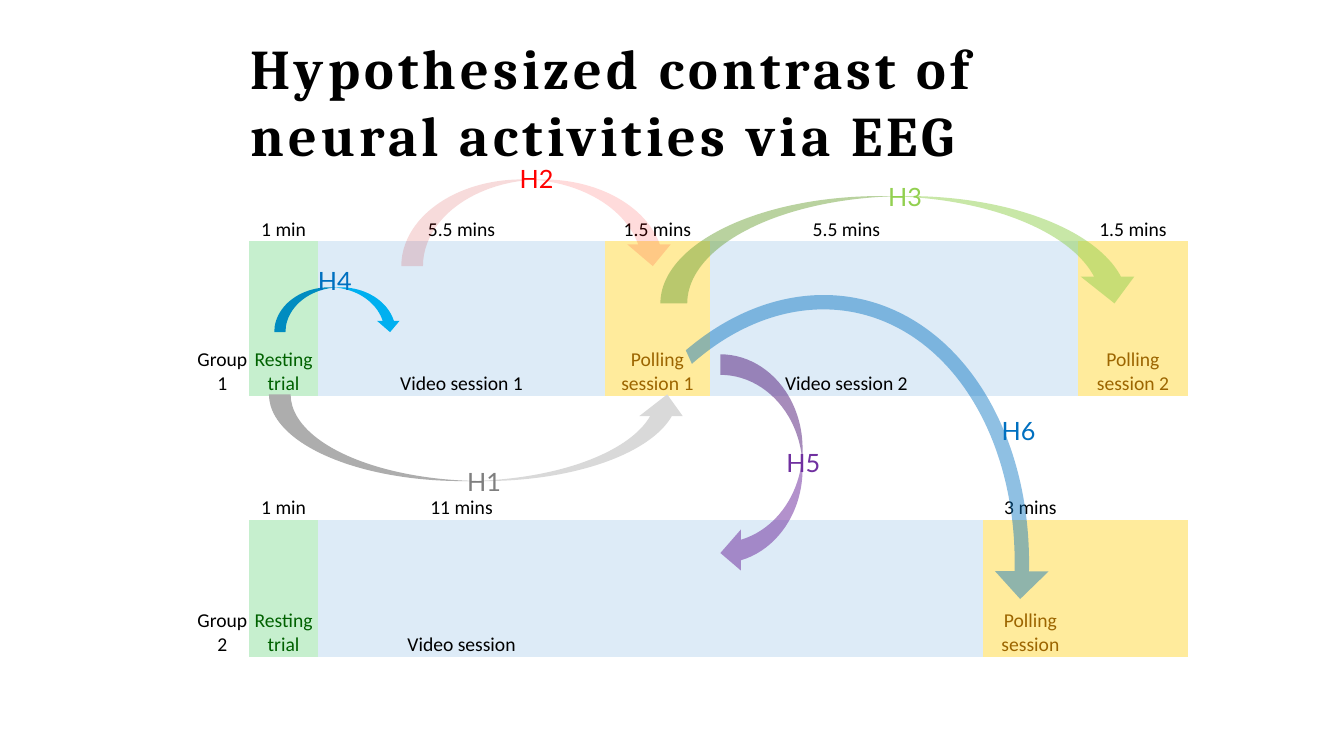
from dataclasses import dataclass

from lxml.etree import SubElement
from pptx import Presentation
from pptx.dml.color import RGBColor
from pptx.enum.shapes import MSO_SHAPE as Preset
from pptx.enum.text import MSO_ANCHOR as Anchor, PP_ALIGN as Align
from pptx.oxml.ns import qn
from pptx.util import Inches, Pt


@dataclass(frozen=True)
class Theme:
    black: str = "000000"
    rest: str = "C6EFCE"
    rest_ink: str = "006100"
    video: str = "DDEBF7"
    poll: str = "FFEB9C"
    poll_ink: str = "9C6500"
    silver: str = "D9D9D9"
    gray: str = "7F7F7F"
    red: str = "FF0000"
    green: str = "92D050"
    sky: str = "00B0F0"
    blue: str = "0070C0"
    purple: str = "7030A0"
    title_size: int = 80
    label_size: int = 36
    cell_size: int = 28


def write(frame, text, font_name, size, color, bold=False):
    frame.word_wrap = True
    run = frame.paragraphs[0].add_run()
    run.text = text
    style = {"name": font_name, "size": Pt(size), "bold": bold}
    for key, value in style.items():
        setattr(run.font, key, value)
    run.font.color.rgb = RGBColor.from_string(color)
    return run


theme = Theme()
deck = Presentation()
deck.slide_width, deck.slide_height = Inches(26.66), Inches(15)
slide = deck.slides.add_slide(deck.slide_layouts[6])

column_widths = [1.06, 1.37, 5.69, 2.08, 5.42, 1.88, 2.19]
row_heights = [1.23, 3.07, 1.23, 1.23, 2.71]
timeline = slide.shapes.add_table(
    len(row_heights), len(column_widths),
    Inches(3.88), Inches(3.56), Inches(19.68), Inches(9.47),
).table
table_flags = {"first_row": False, "horz_banding": False}
for key, value in table_flags.items():
    setattr(timeline, key, value)
no_style_no_grid = "{2D5ABB26-0587-4C30-8999-92F81FD0307C}"
timeline._tbl.tblPr.find(qn("a:tableStyleId")).text = no_style_no_grid
for column, width in zip(timeline.columns, column_widths):
    column.width = Inches(width)
for row, height in zip(timeline.rows, row_heights):
    row.height = Inches(height)

schedule = [
    ["", "1 min", "5.5 mins", "1.5 mins", "5.5 mins", "", "1.5 mins"],
    ["Group 1", "Resting trial", "Video session 1", "Polling session 1",
     "Video session 2", "", "Polling session 2"],
    [""] * 7,
    ["", "1 min", "11 mins", "", "", "3 mins", ""],
    ["Group 2", "Resting trial", "Video session", "", "", "Polling session", ""],
]
rest, video, poll = theme.rest, theme.video, theme.poll
session_fills = {
    1: [None, rest, video, poll, video, video, poll],
    4: [None, rest, video, video, video, poll, poll],
}
inks = {rest: theme.rest_ink, poll: theme.poll_ink}
cell_format = {
    "margin_left": Inches(0.01), "margin_right": Inches(0.01),
    "margin_top": Inches(0.01), "margin_bottom": 0,
    "vertical_anchor": Anchor.BOTTOM,
}
for row_index, texts in enumerate(schedule):
    fills = session_fills.get(row_index, [None] * 7)
    for column_index, (text, fill) in enumerate(zip(texts, fills)):
        cell = timeline.cell(row_index, column_index)
        for key, value in cell_format.items():
            setattr(cell, key, value)
        if fill:
            cell.fill.solid()
            cell.fill.fore_color.rgb = RGBColor.from_string(fill)
        else:
            cell.fill.background()
        if text:
            ink = inks.get(fill, theme.black)
            write(cell.text_frame, text, "Calibri", theme.cell_size, ink)
            cell.text_frame.paragraphs[0].alignment = Align.CENTER

down, left = Preset.CURVED_DOWN_ARROW, Preset.CURVED_LEFT_ARROW
hypotheses = [
    ("H1", left, (8.64, 4.52, 1.72, 8.33), theme.silver, 100,
     (9.17, 9.21, 1.04), theme.gray),
    ("H2", down, (7.96, 3.56, 5.42, 1.72), theme.red, 14,
     (10.21, 3.19, 0.98), theme.red),
    ("H3", down, (13.1, 3.89, 9.54, 2.13), theme.green, 50,
     (17.52, 3.54, 1.09), theme.green),
    ("H4", down, (5.44, 5.7, 2.52, 0.89), theme.sky, 100,
     (6.21, 5.21, 1.23), theme.blue),
    ("H5", left, (14.29, 7.03, 1.63, 4.35), theme.purple, 53,
     (15.5, 8.82, 1.46), theme.purple),
    ("H6", Preset.CIRCULAR_ARROW, (10.88, 5.41, 9.85, 12.91), theme.blue, 44,
     (19.77, 8.19, 2.16), theme.blue),
]
arrows = {}
for name, preset, box, color, opacity, label_box, ink in hypotheses:
    arrow = slide.shapes.add_shape(preset, *map(Inches, box))
    arrow.shadow.inherit = False
    arrow.line.fill.background()
    arrow.fill.solid()
    arrow.fill.fore_color.rgb = RGBColor.from_string(color)
    if opacity < 100:
        tint = arrow._element.spPr.find(".//" + qn("a:srgbClr"))
        SubElement(tint, qn("a:alpha"), val=str(opacity * 1000))
    arrows[name] = arrow
    label = slide.shapes.add_textbox(*map(Inches, label_box), Inches(0.71))
    write(label.text_frame, name, "Lato", theme.label_size, ink)

arrows["H1"].rotation = 90
arrows["H1"]._element.spPr.xfrm.set("flipV", "1")
arrows["H6"].rotation = 11.6
for index, value in enumerate([0.029, 4.224, 204.976, 140.564, 0.054]):
    arrows["H6"].adjustments[index] = value

heading = slide.shapes.add_textbox(
    Inches(4.87), Inches(0.61), Inches(18.7), Inches(2.79))
heading_run = write(
    heading.text_frame, "Hypothesized contrast of neural activities via EEG",
    "Cambria", theme.title_size, theme.black, bold=True)
heading_run.font._element.set("spc", "600")

deck.save("out.pptx")
